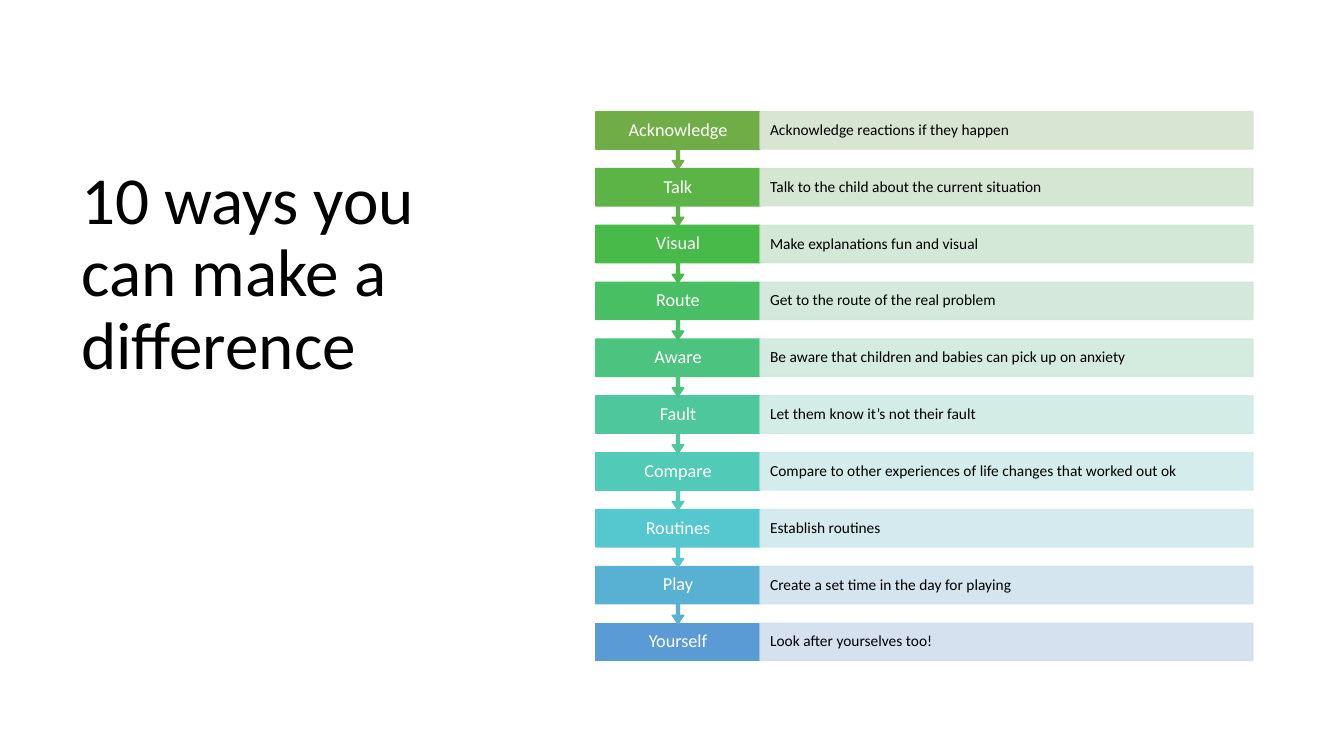
"""Build the slide listing ten ways to make a difference."""

from dataclasses import dataclass

from lxml import etree
from pptx import Presentation
from pptx.dml.color import RGBColor
from pptx.enum.shapes import MSO_SHAPE
from pptx.enum.text import MSO_ANCHOR, PP_ALIGN
from pptx.oxml.ns import qn
from pptx.shapes.autoshape import Shape
from pptx.slide import Slide
from pptx.util import Pt

RECTANGLE = MSO_SHAPE.RECTANGLE
CALLOUT = MSO_SHAPE.UP_ARROW_CALLOUT
TOP, MIDDLE = MSO_ANCHOR.TOP, MSO_ANCHOR.MIDDLE
LEFT, CENTER = PP_ALIGN.LEFT, PP_ALIGN.CENTER


@dataclass(frozen=True)
class Theme:
    font: str = "Calibri"
    dark: str = "000000"
    light: str = "FFFFFF"
    title_size: float = 48
    label_size: float = 13
    detail_size: float = 11
    tint_opacity: int = 90


@dataclass(frozen=True)
class Frame:
    left: float
    top: float
    width: float
    height: float


@dataclass(frozen=True)
class Step:
    label: str
    detail: str
    color: str
    tint: str


@dataclass(frozen=True)
class TextStyle:
    size: float
    color: str
    align: PP_ALIGN = LEFT
    anchor: MSO_ANCHOR = MIDDLE
    side_inset: float = 7.2
    end_inset: float = 0


THEME = Theme()
TITLE_STYLE = TextStyle(THEME.title_size, THEME.dark, anchor=TOP, end_inset=3.6)
LABEL_STYLE = TextStyle(THEME.label_size, THEME.light, CENTER, side_inset=8.4)
DETAIL_STYLE = TextStyle(THEME.detail_size, THEME.dark)

TITLE = "10 ways you can make a difference"
TITLE_FRAME = Frame(51, 115.2, 299, 211.7)
LABEL_LEFT, LABEL_WIDTH = 425.5, 117.5
DETAIL_LEFT, DETAIL_WIDTH = 543, 352
FIRST_TOP, PITCH = 79.8, 40.6
BAR_HEIGHT, CALLOUT_HEIGHT = 26.65, 41
CALLOUT_ADJUSTMENTS = (0.05, 0.1, 0.15, 0.65)

STEPS = (
    Step("Acknowledge", "Acknowledge reactions if they happen", "70AD47", "D5E3CF"),
    Step("Talk", "Talk to the child about the current situation", "5CB447", "D1E4CF"),
    Step("Visual", "Make explanations fun and visual", "47BA49", "CFE6D2"),
    Step("Route", "Get to the route of the real problem", "49BF64", "D0E7D8"),
    Step("Aware", "Be aware that children and babies can pick up on anxiety", "4CC37F", "D0E9DD"),
    Step("Fault", "Let them know it’s not their fault", "4FC79C", "D0EAE4"),
    Step("Compare", "Compare to other experiences of life changes that worked out ok", "52CAB8", "D0ECEA"),
    Step("Routines", "Establish routines", "55C7CE", "D1E8ED"),
    Step("Play", "Create a set time in the day for playing", "58B1D2", "D1E3EE"),
    Step("Yourself", "Look after yourselves too!", "5B9BD5", "D2DEEF"),
)


def lengths(frame: Frame) -> tuple[Pt, Pt, Pt, Pt]:
    """Return the frame as slide lengths."""
    return Pt(frame.left), Pt(frame.top), Pt(frame.width), Pt(frame.height)


def write(box: Shape, text: str, style: TextStyle) -> None:
    """Put one styled paragraph into a box."""
    text_frame = box.text_frame
    text_frame.text = text
    text_frame.word_wrap = True
    text_frame.vertical_anchor = style.anchor
    text_frame.margin_left = text_frame.margin_right = Pt(style.side_inset)
    text_frame.margin_top = text_frame.margin_bottom = Pt(style.end_inset)
    para = text_frame.paragraphs[0]
    para.alignment = style.align
    para.line_spacing = 0.9
    for span in para.runs:
        span.font.name = THEME.font
        span.font.size = Pt(style.size)
        span.font.color.rgb = RGBColor.from_string(style.color)


def add_text(page: Slide, frame: Frame, text: str, style: TextStyle) -> None:
    """Add a text box."""
    write(page.shapes.add_textbox(*lengths(frame)), text, style)


def add_block(page: Slide, kind: MSO_SHAPE, frame: Frame, color: str, opacity: int = 100) -> Shape:
    """Add a shape whose fill and outline share one colour."""
    block = page.shapes.add_shape(kind, *lengths(frame))
    block.shadow.inherit = False
    block.fill.solid()
    block.fill.fore_color.rgb = RGBColor.from_string(color)
    block.line.color.rgb = RGBColor.from_string(color)
    block.line.width = Pt(1)
    if opacity < 100:
        for node in block._element.spPr.iter(qn("a:srgbClr")):
            etree.SubElement(node, qn("a:alpha"), val=str(opacity * 1000))
    return block


def add_step(page: Slide, index: int, step: Step) -> None:
    """Add one row, with an arrow to the next row unless it is the last."""
    top = FIRST_TOP + index * PITCH
    label_frame = Frame(LABEL_LEFT, top, LABEL_WIDTH, BAR_HEIGHT)
    if index == len(STEPS) - 1:
        add_block(page, RECTANGLE, label_frame, step.color)
    else:
        callout_frame = Frame(LABEL_LEFT, top, LABEL_WIDTH, CALLOUT_HEIGHT)
        callout = add_block(page, CALLOUT, callout_frame, step.color)
        callout.rotation = 180
        for position, value in enumerate(CALLOUT_ADJUSTMENTS):
            callout.adjustments[position] = value
    add_text(page, label_frame, step.label, LABEL_STYLE)
    detail_frame = Frame(DETAIL_LEFT, top, DETAIL_WIDTH, BAR_HEIGHT)
    detail = add_block(page, RECTANGLE, detail_frame, step.tint, THEME.tint_opacity)
    write(detail, step.detail, DETAIL_STYLE)


def main() -> None:
    """Build and save the deck."""
    deck = Presentation()
    deck.slide_width, deck.slide_height = Pt(960), Pt(540)
    page = deck.slides.add_slide(deck.slide_layouts[6])
    add_text(page, TITLE_FRAME, TITLE, TITLE_STYLE)
    for index, step in reversed(list(enumerate(STEPS))):
        add_step(page, index, step)
    deck.save("out.pptx")


if __name__ == "__main__":
    main()
